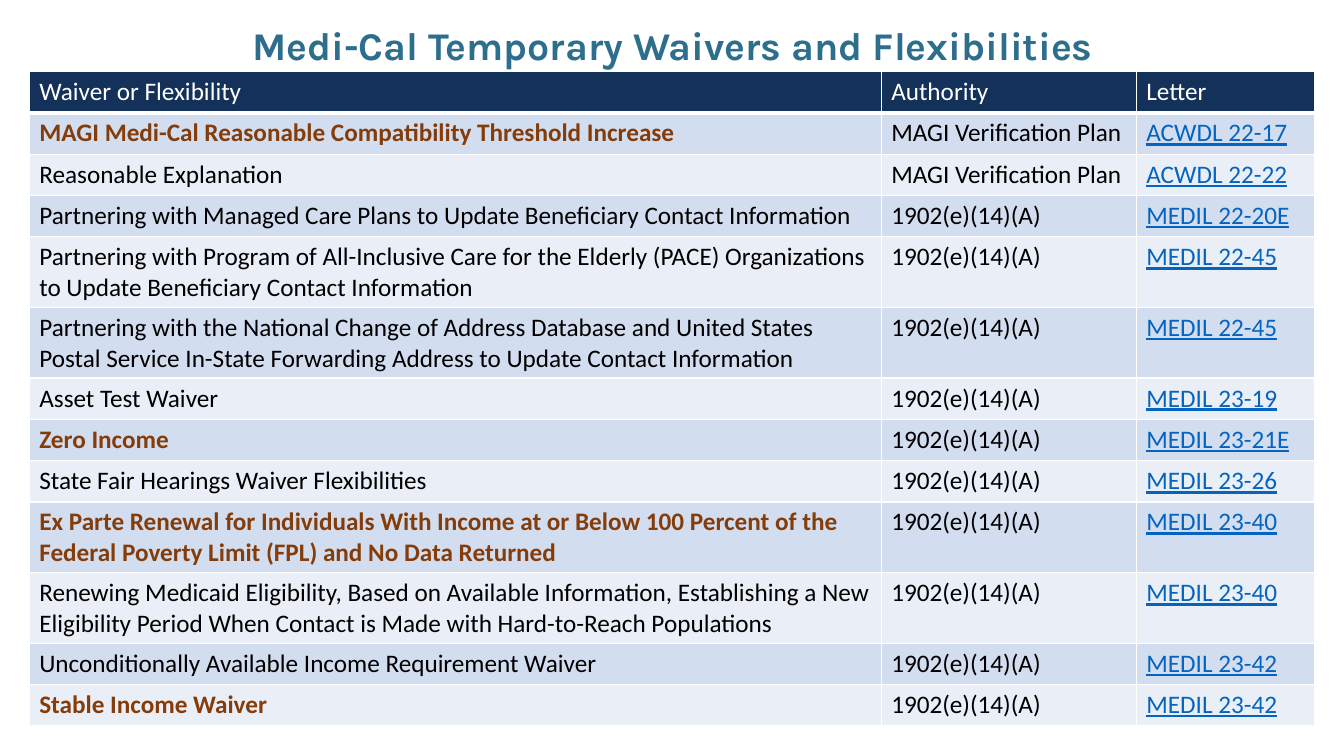
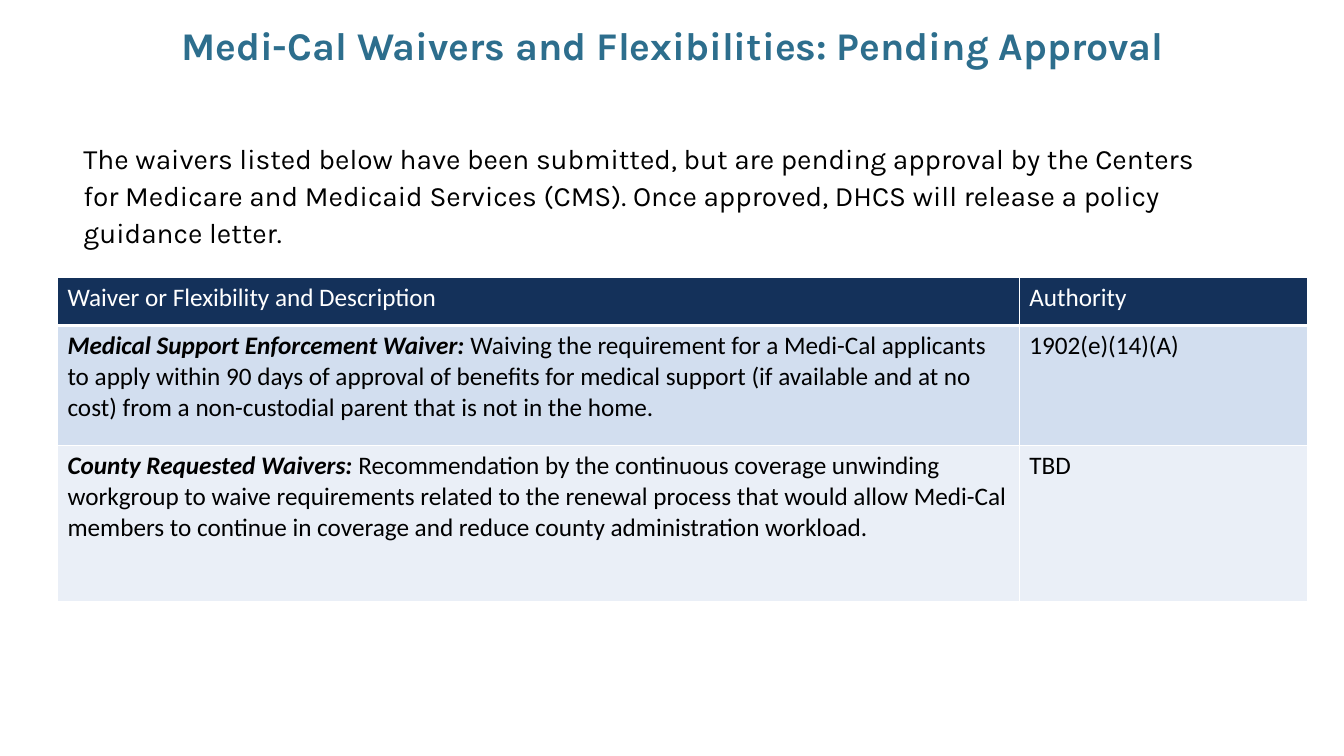
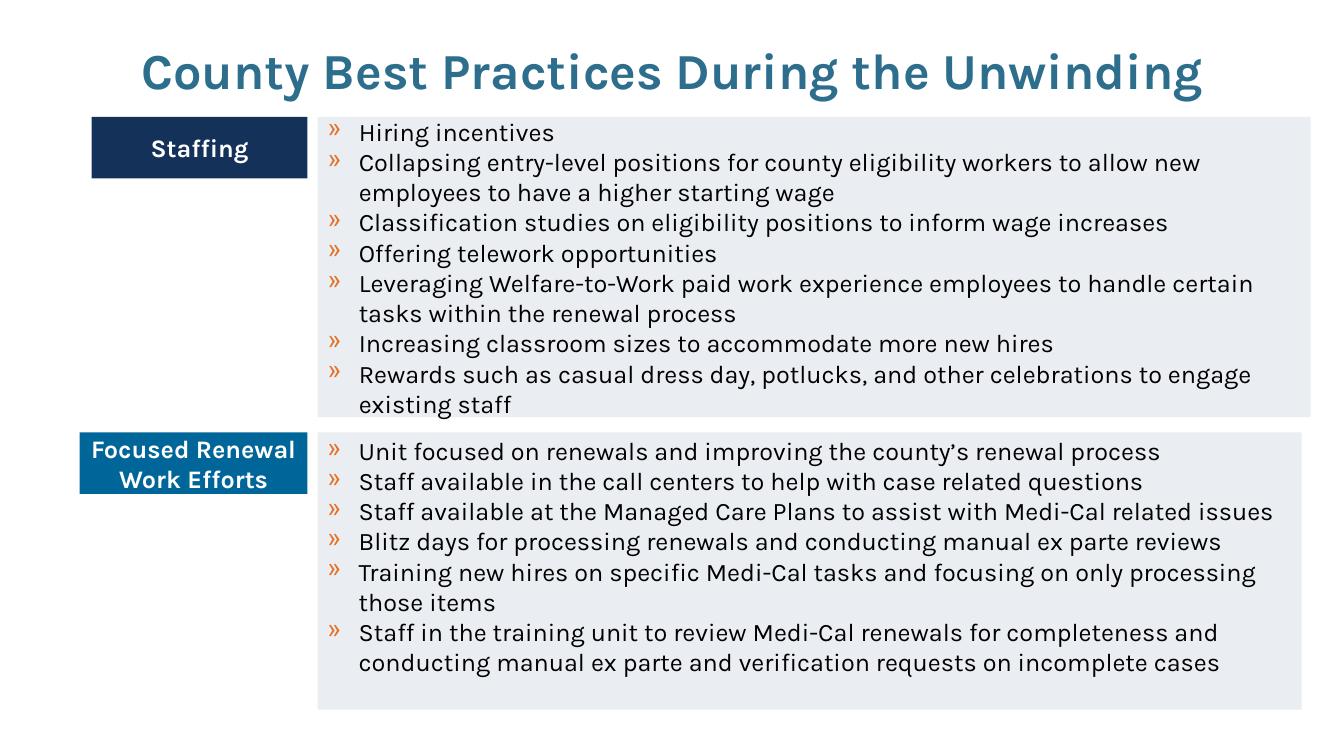
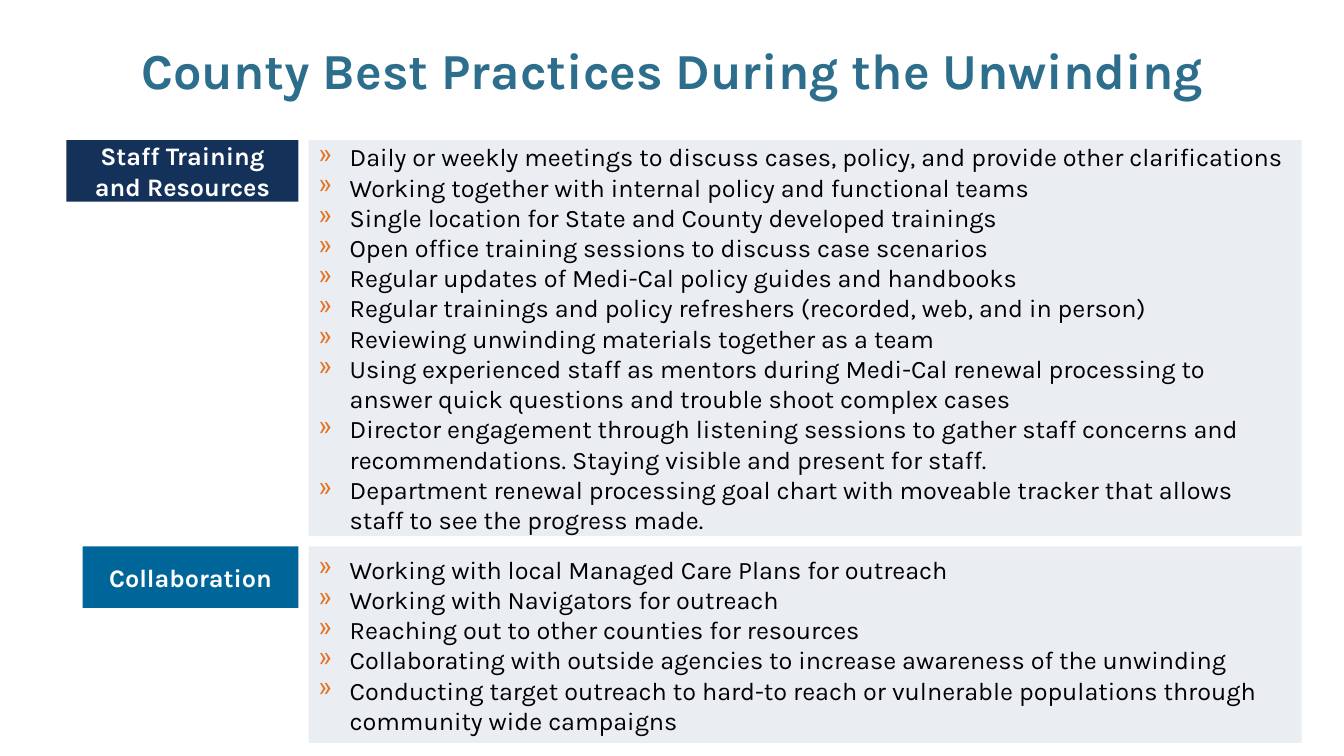
import pptx
import pptx.dml.color
import pptx.enum.shapes
import pptx.enum.text
import pptx.util
from lxml import etree
from pptx.oxml.ns import qn
from pptx.util import Inches

NAVY, BLUE, TEAL, ORANGE, BROWN = "14315A", "006699", "2D6E8D", "E47225", "843C0B"
LINK, BLACK, WHITE, PANEL = "0563C1", "000000", "FFFFFF", "EAEDF2"
BANDS = ("D2DEEF", "EAEFF7")
HEADING_FONT, TABLE_FONT = "Karla", "Calibri"
ALIGN = pptx.enum.text.PP_ALIGN
MIDDLE = pptx.enum.text.MSO_ANCHOR.MIDDLE

ASSETS = "1902(e)(14)(A)"
VERIFICATION = "MAGI Verification Plan"
HIGHLIGHTED = {
    "MAGI Medi-Cal Reasonable Compatibility Threshold Increase",
    "Zero Income",
    "Ex Parte Renewal for Individuals With Income at or Below 100 Percent of the "
    "Federal Poverty Limit (FPL) and No Data Returned",
    "Stable Income Waiver",
}
APPROVED = [
    ("Waiver or Flexibility", "Authority", "Letter"),
    ("MAGI Medi-Cal Reasonable Compatibility Threshold Increase", VERIFICATION, "ACWDL 22-17"),
    ("Reasonable Explanation", VERIFICATION, "ACWDL 22-22"),
    ("Partnering with Managed Care Plans to Update Beneficiary Contact Information",
     ASSETS, "MEDIL 22-20E"),
    ("Partnering with Program of All-Inclusive Care for the Elderly (PACE) Organizations "
     "to Update Beneficiary Contact Information", ASSETS, "MEDIL 22-45"),
    ("Partnering with the National Change of Address Database and United States Postal "
     "Service In-State Forwarding Address to Update Contact Information",
     ASSETS, "MEDIL 22-45"),
    ("Asset Test Waiver", ASSETS, "MEDIL 23-19"),
    ("Zero Income", ASSETS, "MEDIL 23-21E"),
    ("State Fair Hearings Waiver Flexibilities", ASSETS, "MEDIL 23-26"),
    ("Ex Parte Renewal for Individuals With Income at or Below 100 Percent of the "
     "Federal Poverty Limit (FPL) and No Data Returned", ASSETS, "MEDIL 23-40"),
    ("Renewing Medicaid Eligibility, Based on Available Information, Establishing a New "
     "Eligibility Period When Contact is Made with Hard-to-Reach Populations",
     ASSETS, "MEDIL 23-40"),
    ("Unconditionally Available Income Requirement Waiver", ASSETS, "MEDIL 23-42"),
    ("Stable Income Waiver", ASSETS, "MEDIL 23-42"),
]
PENDING = [
    ("Waiver or Flexibility and Description", "Authority"),
    ("Medical Support Enforcement Waiver: Waiving the requirement for a Medi-Cal "
     "applicants to apply within 90 days of approval of benefits for medical support (if "
     "available and at no cost) from a non-custodial parent that is not in the home.", ASSETS),
    ("County Requested Waivers: Recommendation by the continuous coverage unwinding "
     "workgroup to waive requirements related to the renewal process that would allow "
     "Medi-Cal members to continue in coverage and reduce county administration workload.",
     "TBD"),
]
PENDING_INTRO = (
    "The waivers listed below have been submitted, but are pending approval by the Centers "
    "for Medicare and Medicaid Services (CMS). Once approved, DHCS will release a policy "
    "guidance letter.")
STAFFING = [
    "Hiring incentives",
    "Collapsing entry-level positions for county eligibility workers to allow new employees "
    "to have a higher starting wage",
    "Classification studies on eligibility positions to inform wage increases",
    "Offering telework opportunities",
    "Leveraging Welfare-to-Work paid work experience employees to handle certain tasks "
    "within the renewal process",
    "Increasing classroom sizes to accommodate more new hires",
    "Rewards such as casual dress day, potlucks, and other celebrations to engage existing "
    "staff",
]
RENEWALS = [
    "Unit focused on renewals and improving the county’s renewal process",
    "Staff available in the call centers to help with case related questions",
    "Staff available at the Managed Care Plans to assist with Medi-Cal related issues",
    "Blitz days for processing renewals and conducting manual ex parte reviews",
    "Training new hires on specific Medi-Cal tasks and focusing on only processing those "
    "items",
    "Staff in the training unit to review Medi-Cal renewals for completeness and conducting "
    "manual ex parte and verification requests on incomplete cases",
]
TRAINING = [
    "Daily or weekly meetings to discuss cases, policy, and provide other clarifications",
    "Working together with internal policy and functional teams",
    "Single location for State and County developed trainings",
    "Open office training sessions to discuss case scenarios",
    "Regular updates of Medi-Cal policy guides and handbooks",
    "Regular trainings and policy refreshers (recorded, web, and in person)",
    "Reviewing unwinding materials together as a team",
    "Using experienced staff as mentors during Medi-Cal renewal processing to answer quick "
    "questions and trouble shoot complex cases",
    "Director engagement through listening sessions to gather staff concerns and "
    "recommendations. Staying visible and present for staff.",
    "Department renewal processing goal chart with moveable tracker that allows staff to see "
    "the progress made.",
]
COLLABORATION = [
    "Working with local Managed Care Plans for outreach",
    "Working with Navigators for outreach",
    "Reaching out to other counties for resources",
    "Collaborating with outside agencies to increase awareness of the unwinding",
    "Conducting target outreach to hard-to reach or vulnerable populations through "
    "community wide campaigns",
]


def rgb(value):
    return pptx.dml.color.RGBColor.from_string(value)


def style(font, size, color, name=HEADING_FONT, bold=False):
    font.size, font.name, font.bold = pptx.util.Pt(size), name, bold
    font.color.rgb = rgb(color)


def add_text(page, box, text, size, color, bold=False):
    frame = page.shapes.add_textbox(*map(Inches, box)).text_frame
    frame.word_wrap = True
    frame.text = text
    style(frame.paragraphs[0].runs[0].font, size, color, bold=bold)
    return frame


def add_title(page, box, text, size):
    frame = add_text(page, box, text, size, TEAL, bold=True)
    frame.vertical_anchor = MIDDLE
    frame.paragraphs[0].alignment = ALIGN.CENTER
    frame.paragraphs[0].line_spacing = 0.9


def add_block(page, box, fill):
    """Add a plain filled rectangle and return its text frame."""
    block = page.shapes.add_shape(
        pptx.enum.shapes.MSO_SHAPE.RECTANGLE, *map(Inches, box))
    block.shadow.inherit = False
    block.fill.solid()
    block.fill.fore_color.rgb = rgb(fill)
    block.line.fill.background()
    block.text_frame.word_wrap = True
    block.text_frame.vertical_anchor = MIDDLE
    return block.text_frame


def add_bullet(para):
    properties = para._p.get_or_add_pPr()
    properties.set("marL", str(Inches(0.31)))
    properties.set("indent", str(-Inches(0.31)))
    color = etree.SubElement(properties, qn("a:buClr"))
    etree.SubElement(color, qn("a:srgbClr"), val=ORANGE)
    etree.SubElement(properties, qn("a:buChar"), char="»")


def add_practices(page, box, label, label_width, fill, items, bottom_inset=0.05):
    """Add a grey panel of bullets filling box, with its label to the left."""
    left, top = box[:2]
    heading = add_block(page, (left - 0.1 - label_width, top, label_width, 0.61), fill)
    heading.text = label
    heading.paragraphs[0].alignment = ALIGN.CENTER
    style(heading.paragraphs[0].runs[0].font, 18, WHITE, bold=True)

    panel = add_block(page, box, PANEL)
    panel.margin_bottom = Inches(bottom_inset)
    panel.text = "\n".join(items)
    for para in panel.paragraphs:
        para.alignment = ALIGN.LEFT
        add_bullet(para)
        style(para.runs[0].font, 18, BLACK)


def add_borders(cell, bottom_width):
    properties = cell._tc.get_or_add_tcPr()
    for side, width in (("L", 1), ("R", 1), ("T", 1), ("B", bottom_width)):
        line = etree.SubElement(
            properties, qn(f"a:ln{side}"), w=str(pptx.util.Pt(width)))
        color = etree.SubElement(etree.SubElement(line, qn("a:solidFill")), qn("a:srgbClr"))
        color.set("val", WHITE)


def add_waiver_table(page, left, top, widths, heights, rows):
    """Add a banded table with a navy header and return it."""
    table = page.shapes.add_table(
        len(rows), len(widths), Inches(left), Inches(top),
        Inches(sum(widths)), Inches(sum(heights))).table
    for column, width in zip(table.columns, widths):
        column.width = Inches(width)
    for index, (texts, height) in enumerate(zip(rows, heights)):
        table.rows[index].height = Inches(height)
        header = index == 0
        for cell, text in zip(table.rows[index].cells, texts):
            add_borders(cell, 3 if header else 1)
            cell.fill.solid()
            cell.fill.fore_color.rgb = rgb(NAVY if header else BANDS[(index - 1) % 2])
            cell.text = text
            style(cell.text_frame.paragraphs[0].runs[0].font, 18,
                  WHITE if header else BLACK, TABLE_FONT)
    return table


def approved_slide(page):
    add_title(page, (0.92, 0.18, 11.5, 0.59), "Medi-Cal Temporary Waivers and Flexibilities", 28)
    table = add_waiver_table(page, 0.29, 0.71, (8.45, 2.53, 1.77),
                             [0.41] * len(APPROVED), APPROVED)
    for index in range(1, len(APPROVED)):
        waiver, _, letter = table.rows[index].cells
        if waiver.text in HIGHLIGHTED:
            style(waiver.text_frame.paragraphs[0].runs[0].font, 18, BROWN, TABLE_FONT, True)
        font = letter.text_frame.paragraphs[0].runs[0].font
        font.color.rgb = rgb(LINK)
        font.underline = True


def pending_slide(page):
    add_title(page, (0.92, 0.18, 11.5, 0.59),
              "Medi-Cal Waivers and Flexibilities: Pending Approval", 28)
    table = add_waiver_table(page, 0.57, 2.75, (9.54, 2.86), (0.48, 1.19, 1.55), PENDING)
    for index in range(1, len(PENDING)):
        para = table.cell(index, 0).text_frame.paragraphs[0]
        name, description = para.text.split(": ", 1)
        lead, rest = para.runs[0], para.add_run()
        lead.text, rest.text = name + ": ", description
        style(lead.font, 18, BLACK, TABLE_FONT, True)
        lead.font.italic = True
        style(rest.font, 18, BLACK, TABLE_FONT)
    intro = add_text(page, (0.73, 1.32, 11.37, 1.25), PENDING_INTRO, 20, BLACK)
    intro.paragraphs[0].line_spacing = 1.1


def practices_slide(page, sections):
    add_title(page, (0.92, 0.17, 11.5, 1.12), "County Best Practices During the Unwinding", 36)
    for section in sections:
        add_practices(page, *section)


def main():
    deck = pptx.Presentation()
    deck.slide_width, deck.slide_height = Inches(13.33), Inches(7.5)
    pages = [deck.slides.add_slide(deck.slide_layouts[6]) for _ in range(4)]
    approved_slide(pages[0])
    pending_slide(pages[1])
    practices_slide(pages[2], [
        ((3.15, 1.16, 9.85, 2.98), "Staffing", 2.14, NAVY, STAFFING),
        ((3.15, 4.29, 9.76, 2.75), "Focused Renewal Work Efforts", 2.26, BLUE, RENEWALS, 0.35),
    ])
    practices_slide(pages[3], [
        ((3.06, 1.39, 9.85, 3.93), "Staff Training and Resources", 2.3, NAVY, TRAINING),
        ((3.06, 5.42, 9.85, 1.95), "Collaboration", 2.14, BLUE, COLLABORATION),
    ])
    deck.save("out.pptx")


if __name__ == "__main__":
    main()
